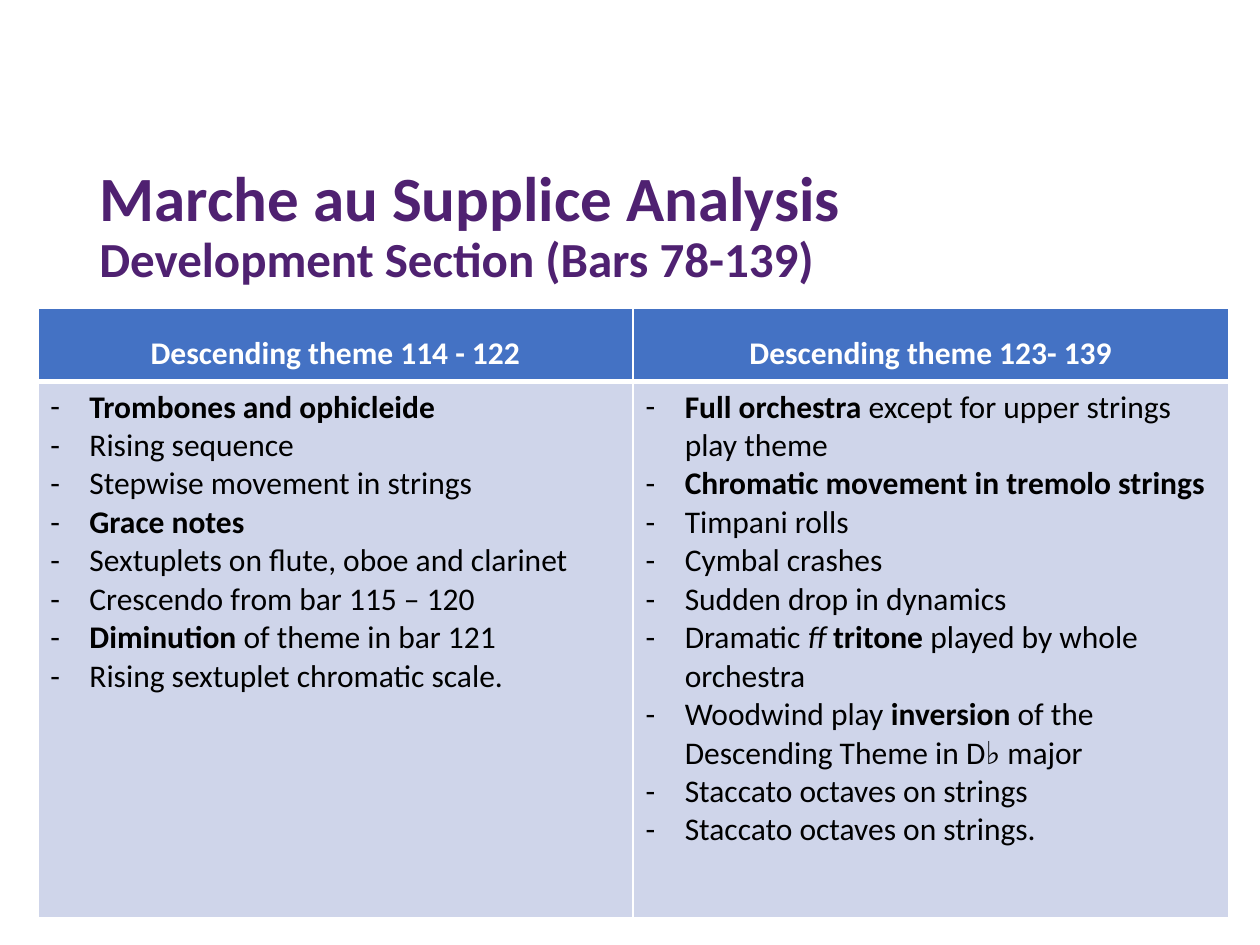
from lxml import etree
from pptx import Presentation
from pptx.dml.color import RGBColor
from pptx.enum.text import MSO_ANCHOR, PP_ALIGN
from pptx.oxml.ns import qn
from pptx.util import Inches, Pt

MIDDLE = MSO_ANCHOR.MIDDLE
CENTER = PP_ALIGN.CENTER
PURPLE = RGBColor(0x4F, 0x21, 0x71)
BLUE = RGBColor(0x44, 0x72, 0xC4)
PALE = RGBColor(0xCF, 0xD5, 0xEA)
WHITE = RGBColor(0xFF, 0xFF, 0xFF)
BLACK = RGBColor(0, 0, 0)

B, I = "bold", "italic"
HEADS = ["Descending theme 114 - 122", "Descending theme 123- 139"]
LISTS = [
    [
        [("Trombones and ophicleide", B)],
        [("Rising sequence", "")],
        [("Stepwise movement in strings", "")],
        [("Grace notes", B)],
        [("Sextuplets on flute, oboe and clarinet", "")],
        [("Crescendo from bar 115 – 120", "")],
        [("Diminution", B), (" of theme in bar 121", "")],
        [("Rising sextuplet chromatic scale.", "")],
    ],
    [
        [("Full orchestra ", B), ("except for upper strings play theme", "")],
        [("Chromatic movement in tremolo strings", B)],
        [("Timpani rolls", "")],
        [("Cymbal crashes", "")],
        [("Sudden drop in dynamics", "")],
        [("Dramatic ", ""), ("ff ", I), ("tritone", B),
         (" played by whole orchestra", "")],
        [("Woodwind play ", ""), ("inversion", B),
         (" of the Descending Theme in D♭ major", "")],
        [("Staccato octaves on strings", "")],
        [("Staccato octaves on strings.", "")],
    ],
]


class Deck:
    def __init__(self, face):
        self.face = face
        self.prs = Presentation()
        self.prs.slide_width = Inches(10)
        self.prs.slide_height = Inches(7.5)
        self.slide = self.prs.slides.add_slide(self.prs.slide_layouts[6])

    def style(self, run, size, color, bold=False, italic=False):
        font = run.font
        font.name = self.face
        font.size = Pt(size)
        font.color.rgb = color
        font.bold = bold
        font.italic = italic

    def title(self, lines, sizes, *box):
        frame = self.slide.shapes.add_textbox(*map(Inches, box)).text_frame
        frame.word_wrap = True
        frame.vertical_anchor = MIDDLE
        para = frame.paragraphs[0]
        para.text = "\v".join(lines)
        para.line_spacing = 0.9
        for run, size in zip(para.runs, sizes):
            self.style(run, size, PURPLE, True)

    def border(self, cell, top, bottom):
        props = cell._tc.get_or_add_tcPr()
        for side, width in zip("LRTB", (1, 1, top, bottom)):
            line = etree.SubElement(props, qn(f"a:ln{side}"), w=str(Pt(width)))
            fill = etree.SubElement(line, qn("a:solidFill"))
            etree.SubElement(fill, qn("a:srgbClr"), val=str(WHITE))

    def paint(self, cell, color, top, bottom):
        self.border(cell, top, bottom)
        cell.fill.solid()
        cell.fill.fore_color.rgb = color

    def head(self, cell, text):
        self.paint(cell, BLUE, 1, 3)
        para = cell.text_frame.paragraphs[0]
        para.text = text
        para.alignment = CENTER
        para.line_spacing = 1.5
        self.style(para.runs[0], 18, WHITE, True)

    def body(self, cell, items):
        self.paint(cell, PALE, 3, 1)
        frame = cell.text_frame
        frame.text = "\n".join("" for item in items)
        for para, item in zip(frame.paragraphs, items):
            self.dash(para)
            for text, look in item:
                run = para.add_run()
                run.text = text
                self.style(run, 18, BLACK, look == B, look == I)

    def dash(self, para):
        props = para._p.get_or_add_pPr()
        gap = Inches(0.31)
        props.set("marL", str(gap))
        props.set("indent", str(-gap))
        etree.SubElement(props, qn("a:buFont"), typeface=self.face)
        etree.SubElement(props, qn("a:buChar"), char="-")

    def table(self, heads, lists, rows, *box):
        shape = self.slide.shapes.add_table(2, len(heads), *map(Inches, box))
        table = shape.table
        for row, height in zip(table.rows, rows):
            row.height = Inches(height)
        for col, (text, items) in enumerate(zip(heads, lists)):
            self.head(table.cell(0, col), text)
            self.body(table.cell(1, col), items)


def main():
    deck = Deck("Calibri")
    deck.title(["Marche au Supplice Analysis",
                "Development Section (Bars 78-139)"],
               [36, 28], 0.69, 1.08, 8.62, 1.45)
    deck.table(HEADS, LISTS, [0.58, 4.25], 0.3, 2.45, 9.45, 4.83)
    deck.prs.save("out.pptx")


if __name__ == "__main__":
    main()
